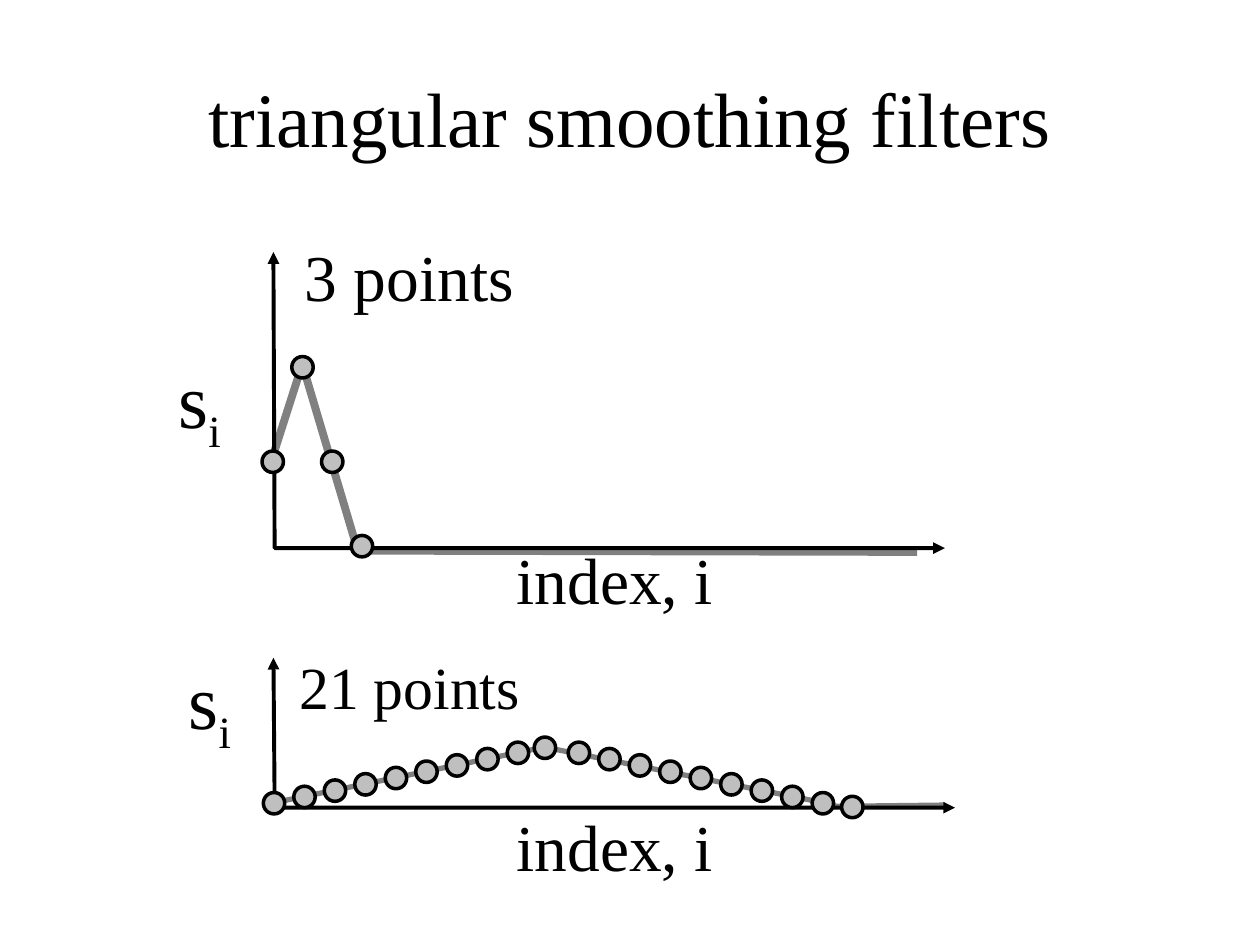
from dataclasses import dataclass

from lxml import etree
from pptx import Presentation
from pptx.dml.color import RGBColor
from pptx.enum import shapes, text
from pptx.oxml import ns
from pptx.util import Inches, Pt

BLACK = RGBColor(0x00, 0x00, 0x00)
CURVE_GRAY = RGBColor(0x80, 0x80, 0x80)
DOT_GRAY = RGBColor(0xBF, 0xBF, 0xBF)
FONT = "Times New Roman"
DOT_SIZE = 0.17

Point = tuple[float, float]
Box = tuple[float, float, float, float]


@dataclass
class Label:
    wording: str
    box: Box
    size: float
    spacing: float = 0.9
    subscript: str = ""


@dataclass
class Plot:
    curve: list[Point]
    curve_width: float
    axes: list[Point]
    samples: list[Point]
    labels: list[Label]


def triangle_samples() -> list[Point]:
    """Centres of the evenly spaced samples on both flanks, the peak and the end."""
    left, base, step, rise, peak = 2.175, 6.375, 0.242, 0.05, 9
    flanks = [(left + step * i, base - rise * (peak - abs(i - peak)))
              for i in range(2 * peak + 1)]
    flanks[peak] = (4.325, 5.935)
    return flanks + [(6.765, 6.405)]


PLOTS = [
    Plot(
        curve=[(2.15, 3.67), (2.4, 2.89), (2.84, 4.37), (7.28, 4.38)],
        curve_width=4.5,
        axes=[(2.17, 2), (2.18, 4.35), (7.5, 4.35)],
        samples=[(2.165 + 0.236 * i, y)
                 for i, y in enumerate([3.665, 2.915, 3.665, 4.335])],
        labels=[
            Label("s", (1.17, 2.58, 0.83, 1.25), 44, 1, subscript="i"),
            Label("index, i", (3.92, 4.21, 1.92, 0.84), 37.4),
            Label("3 points", (2.25, 1.75, 2, 0.95), 37.4),
        ],
    ),
    Plot(
        curve=[(2.18, 6.37), (4.32, 5.93), (6.53, 6.37), (6.64, 6.4), (7.5, 6.39)],
        curve_width=3,
        axes=[(2.17, 5.22), (2.18, 6.41), (7.58, 6.41)],
        samples=triangle_samples(),
        labels=[
            Label("s", (1.25, 4.97, 0.83, 1.25), 44, 1, subscript="i"),
            Label("index, i", (3.92, 6.33, 1.92, 0.84), 37.4),
            Label("21 points", (2.25, 5.02, 2, 0.95), 34.1, 0.8),
        ],
    ),
]


def add_text(slide, wording: str, box: Box, *, size: float,
             spacing: float = 1, subscript: str = "") -> None:
    frame = slide.shapes.add_textbox(*map(Inches, box)).text_frame
    frame.word_wrap = True
    frame.vertical_anchor = text.MSO_ANCHOR.MIDDLE
    paragraph = frame.paragraphs[0]
    paragraph.alignment = text.PP_ALIGN.CENTER
    paragraph.line_spacing = spacing
    for part in filter(None, (wording, subscript)):
        run = paragraph.add_run()
        run.text = part
        run.font.name = FONT
        run.font.size = Pt(size)
        run.font.color.rgb = BLACK
    if subscript:
        run.font._element.set("baseline", "-25000")


def add_polyline(slide, points: list[Point], color: RGBColor, width: float,
                 arrows: bool = False) -> None:
    start, *rest = [(Inches(x), Inches(y)) for x, y in points]
    builder = slide.shapes.build_freeform(*start)
    builder.add_line_segments(rest, close=False)
    polyline = builder.convert_to_shape()
    polyline.shadow.inherit = False
    polyline.fill.background()
    polyline.line.color.rgb = color
    polyline.line.width = Pt(width)
    if arrows:
        outline = polyline.line._get_or_add_ln()
        for end in ("a:headEnd", "a:tailEnd"):
            etree.SubElement(outline, ns.qn(end), type="triangle")


def add_sample(slide, center: Point) -> None:
    left, top = (Inches(c - DOT_SIZE / 2) for c in center)
    dot = slide.shapes.add_shape(shapes.MSO_SHAPE.OVAL, left, top,
                                 Inches(DOT_SIZE), Inches(DOT_SIZE))
    dot.shadow.inherit = False
    dot.fill.solid()
    dot.fill.fore_color.rgb = DOT_GRAY
    dot.line.color.rgb = BLACK
    dot.line.width = Pt(2)


def add_plot(slide, plot: Plot) -> None:
    add_polyline(slide, plot.curve, CURVE_GRAY, plot.curve_width)
    add_polyline(slide, plot.axes, BLACK, 2.25, arrows=True)
    for center in plot.samples:
        add_sample(slide, center)
    for label in plot.labels:
        add_text(slide, label.wording, label.box, size=label.size,
                 spacing=label.spacing, subscript=label.subscript)


def main() -> None:
    deck = Presentation()
    deck.slide_width, deck.slide_height = Inches(10), Inches(7.5)
    slide = deck.slides.add_slide(deck.slide_layouts[6])
    add_text(slide, "triangular smoothing filters", (0.5, 0.3, 9, 1.25), size=44)
    for plot in PLOTS:
        add_plot(slide, plot)
    deck.save("out.pptx")


if __name__ == "__main__":
    main()
